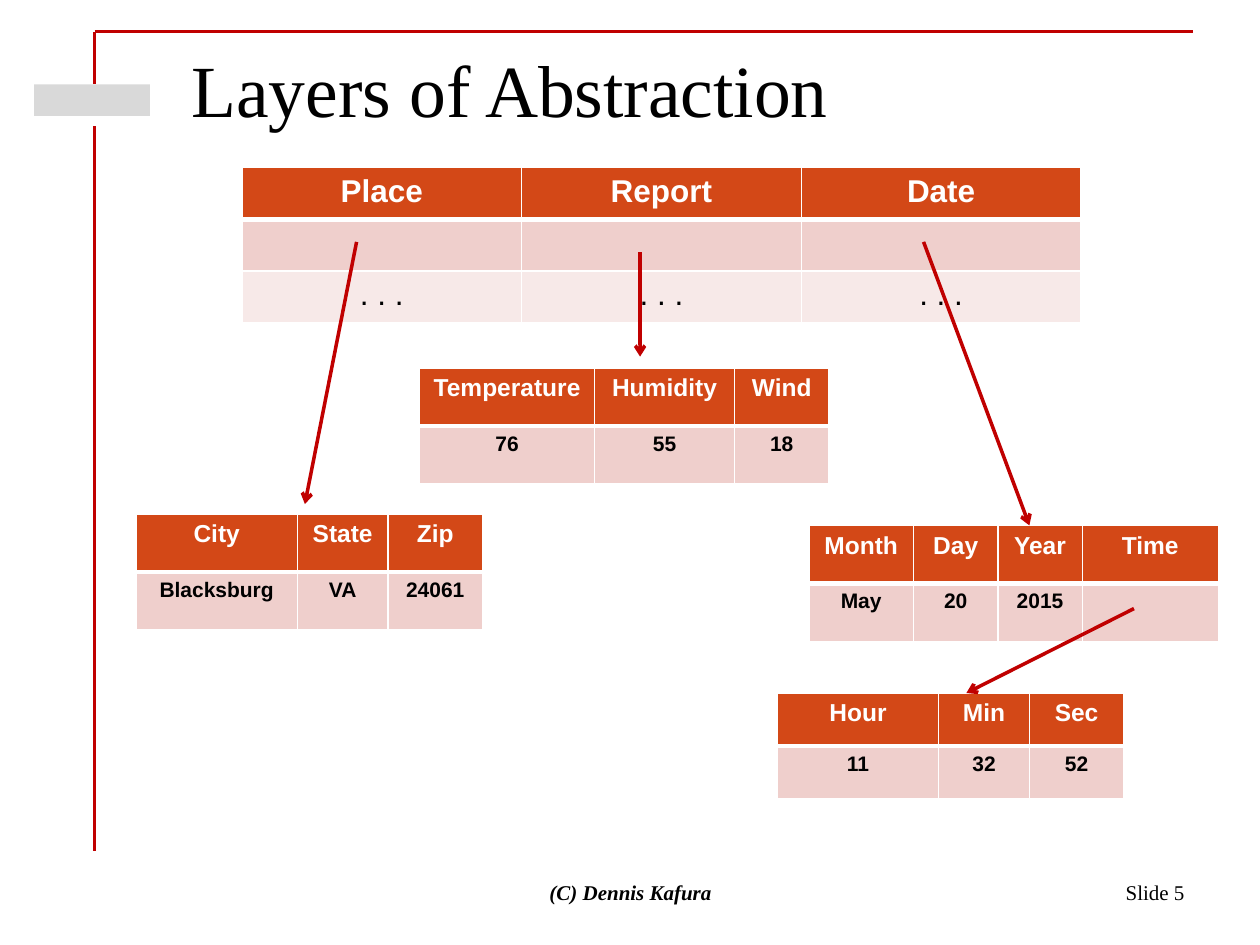
from lxml import etree
from pptx import Presentation
from pptx.dml.color import RGBColor
from pptx.enum import shapes, text
from pptx.oxml import ns
from pptx.util import Inches, Pt

RED, ORANGE, WHITE, BLACK, GRAY = "C00000", "D34817", "FFFFFF", "000000", "D9D9D9"
BANDS = ["EFCFCC", "F7E9E8"]
LEFT, CENTER, RIGHT = text.PP_ALIGN.LEFT, text.PP_ALIGN.CENTER, text.PP_ALIGN.RIGHT
TOP, MIDDLE = text.MSO_ANCHOR.TOP, text.MSO_ANCHOR.MIDDLE


def color(value):
    return RGBColor.from_string(value)


def style(span, size, font, shade, bold=False, italic=False):
    span.font.size = Pt(size)
    span.font.name = font
    span.font.color.rgb = color(shade)
    span.font.bold = bold
    span.font.italic = italic


def add_text(page, box, wording, size, align=LEFT, anchor=TOP, strong=False):
    frame = page.shapes.add_textbox(*map(Inches, box)).text_frame
    frame.word_wrap = True
    frame.vertical_anchor = anchor
    frame.text = wording
    para = frame.paragraphs[0]
    para.alignment = align
    style(para.runs[0], size, "Times New Roman", BLACK, strong, strong)


def add_line(page, start, end, width, arrow=False):
    line = page.shapes.add_connector(
        shapes.MSO_CONNECTOR.STRAIGHT, *map(Inches, (*start, *end)))
    line.line.color.rgb = color(RED)
    line.line.width = Pt(width)
    if arrow:
        etree.SubElement(line.line._get_or_add_ln(), ns.qn("a:tailEnd"), type="arrow")
    etree.SubElement(line._element.spPr, ns.qn("a:effectLst"))


def add_borders(cell, bottom):
    properties = cell._tc.get_or_add_tcPr()
    for side, width in (("L", 1), ("R", 1), ("T", 1), ("B", bottom)):
        border = etree.SubElement(properties, ns.qn(f"a:ln{side}"), w=str(Pt(width)))
        fill = etree.SubElement(border, ns.qn("a:solidFill"))
        etree.SubElement(fill, ns.qn("a:srgbClr"), val=WHITE)


def add_record(page, left, top, widths, height, rows, head_size=14, body_size=12, body_bold=True):
    table = page.shapes.add_table(
        len(rows), len(widths), Inches(left), Inches(top),
        Inches(sum(widths)), Inches(height * len(rows))).table
    for column, width in zip(table.columns, widths):
        column.width = Inches(width)
    for i, values in enumerate(rows):
        table.rows[i].height = Inches(height)
        head = i == 0
        for j, value in enumerate(values):
            cell = table.cell(i, j)
            add_borders(cell, 3 if head else 1)
            cell.fill.solid()
            cell.fill.fore_color.rgb = color(ORANGE if head else BANDS[i - 1])
            para = cell.text_frame.paragraphs[0]
            para.alignment = CENTER
            if value:
                para.text = value
                style(para.runs[0], head_size if head else body_size, "Arial",
                      WHITE if head else BLACK, head or body_bold)


def add_frame(page, left, top, right, bottom):
    add_line(page, (left, top), (right, top), 2)
    badge = page.shapes.add_shape(
        shapes.MSO_SHAPE.RECTANGLE, *map(Inches, (0.27, 0.67, 0.92, 0.25)))
    badge.shadow.inherit = False
    badge.fill.solid()
    badge.fill.fore_color.rgb = color(GRAY)
    badge.line.fill.background()
    add_line(page, (left, top), (left, 0.67), 1.75)
    add_line(page, (left, 1), (left, bottom), 1.75)


def add_footer(page, top, height):
    add_text(page, (7.17, top, 2.33, height), "Slide 5", 12, RIGHT, MIDDLE)
    add_text(page, (3.42, top, 3.17, height), "(C) Dennis Kafura", 12, CENTER, MIDDLE, strong=True)


def add_records(page):
    add_record(page, 1.92, 1.33, [2.22] * 3, 0.41,
               [["Place", "Report", "Date"], [""] * 3, [". . ."] * 3], 18, 18, False)
    add_record(page, 1.08, 4.08, [1.28, 0.72, 0.75], 0.46,
               [["City", "State", "Zip"], ["Blacksburg", "VA", "24061"]])
    add_record(page, 3.33, 2.92, [1.39, 1.11, 0.75], 0.46,
               [["Temperature", "Humidity", "Wind"], ["76", "55", "18"]])
    add_record(page, 6.42, 4.17, [0.83, 0.67, 0.67, 1.08], 0.46,
               [["Month", "Day", "Year", "Time"], ["May", "20", "2015", ""]])
    add_record(page, 6.17, 5.5, [1.28, 0.72, 0.75], 0.42,
               [["Hour", "Min", "Sec"], ["11", "32", "52"]])


def add_arrows(page):
    for start, end in [((2.83, 1.92), (2.42, 4)), ((5.08, 2), (5.08, 2.83)),
                       ((7.33, 1.92), (8.17, 4.17)), ((9, 4.83), (7.67, 5.5))]:
        add_line(page, start, end, 2, arrow=True)


def main():
    deck = Presentation()
    deck.slide_width, deck.slide_height = Inches(10), Inches(7.5)
    page = deck.slides.add_slide(deck.slide_layouts[6])
    add_frame(page, 0.75, 0.25, 9.47, 6.75)
    add_text(page, (1.42, 0.3, 8.08, 0.78), "Layers of Abstraction", 42)
    add_footer(page, 6.83, 0.5)
    add_records(page)
    add_arrows(page)
    deck.save("out.pptx")


if __name__ == "__main__":
    main()
